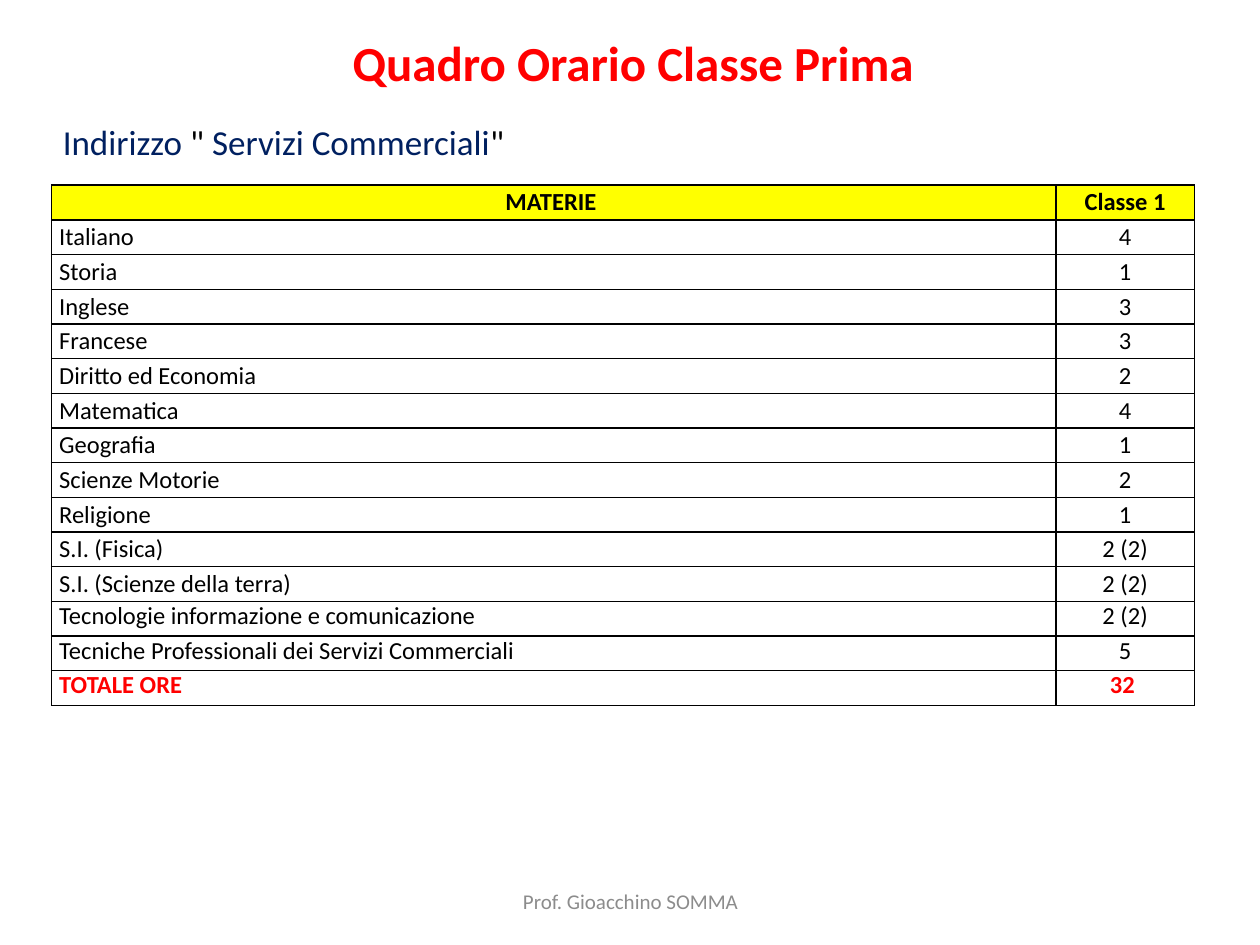
from dataclasses import dataclass

from lxml.etree import SubElement
from pptx import Presentation
from pptx.dml.color import RGBColor
from pptx.enum.text import MSO_ANCHOR, MSO_AUTO_SIZE, PP_ALIGN
from pptx.oxml.ns import qn
from pptx.util import Inches, Pt


@dataclass(frozen=True)
class Theme:
    """Colours, font and type sizes of the slide."""
    font: str = "Calibri"
    red: str = "FF0000"
    navy: str = "002060"
    black: str = "000000"
    grey: str = "8C8C8C"
    yellow: str = "FFFF00"
    title: int = 28
    subtitle: int = 20
    body: int = 14
    footer: int = 12
    border: int = 1


T = Theme()
WIDTH, HEIGHT = Inches(10), Inches(7.5)
HEADER = ("MATERIE ", "Classe 1")
SUBJECTS = [
    ("Italiano", "4"),
    ("Storia", "1"),
    ("Inglese", "3"),
    ("Francese", "3"),
    ("Diritto ed Economia", "2"),
    ("Matematica", "4"),
    ("Geografia", "1"),
    ("Scienze Motorie", "2"),
    ("Religione", "1"),
    ("S.I. (Fisica)", "2 (2)"),
    ("S.I. (Scienze della terra)", "2 (2)"),
    ("Tecnologie informazione e comunicazione", "2 (2)"),
    ("Tecniche Professionali dei Servizi Commerciali", "5"),
]
TOTAL = ("TOTALE ORE", "32 ")
TOP_ANCHORED = 3


def share(x, y, w, h):
    """Turn percentages of the slide into a box of lengths."""
    return tuple(int(v * side / 100) for v, side in
                 ((x, WIDTH), (y, HEIGHT), (w, WIDTH), (h, HEIGHT)))


def add_run(p, text, size, color, bold=False):
    """Append one formatted run to a paragraph."""
    r = p.add_run()
    r.text = text
    r.font.name = T.font
    r.font.size = Pt(size)
    r.font.bold = bold
    r.font.color.rgb = RGBColor.from_string(color)


def add_line(s, box, runs, size, align=PP_ALIGN.LEFT, bold=False,
             anchor=MSO_ANCHOR.TOP, fit=MSO_AUTO_SIZE.SHAPE_TO_FIT_TEXT):
    """Place a one-paragraph text box made of (text, colour) runs."""
    tf = s.shapes.add_textbox(*box).text_frame
    tf.word_wrap = True
    tf.auto_size = fit
    tf.vertical_anchor = anchor
    p = tf.paragraphs[0]
    p.alignment = align
    for text, color in runs:
        add_run(p, text, size, color, bold)


def add_title(s, box):
    """Place the slide title."""
    add_line(s, box, [("Quadro Orario Classe Prima", T.red)], T.title,
             PP_ALIGN.CENTER, bold=True)


def add_subtitle(s, box):
    """Place the name of the course of study."""
    add_line(s, box, [("Indirizzo ", T.navy), ('" ', T.black),
                      ("Servizi Commerciali", T.navy), ('"', T.black)],
             T.subtitle)


def add_footer(s, box):
    """Place the author line."""
    add_line(s, box, [("Prof. Gioacchino SOMMA", T.grey)], T.footer,
             PP_ALIGN.CENTER, anchor=MSO_ANCHOR.MIDDLE,
             fit=MSO_AUTO_SIZE.NONE)


def set_borders(cell):
    """Draw a solid line on all four sides of a cell."""
    tc_pr = cell._tc.get_or_add_tcPr()
    for side in ("a:lnL", "a:lnR", "a:lnT", "a:lnB"):
        ln = SubElement(tc_pr, qn(side), w=str(Pt(T.border)))
        fill = SubElement(ln, qn("a:solidFill"))
        SubElement(fill, qn("a:srgbClr"), val=T.black)


def fill_cell(cell, text, align, anchor, color, bold, fill):
    """Write and format one table cell."""
    set_borders(cell)
    if fill:
        cell.fill.solid()
        cell.fill.fore_color.rgb = RGBColor.from_string(fill)
    else:
        cell.fill.background()
    cell.margin_left = cell.margin_right = Inches(0.06)
    cell.margin_top = cell.margin_bottom = 0
    cell.vertical_anchor = anchor
    p = cell.text_frame.paragraphs[0]
    p.alignment = align
    add_run(p, text, T.body, color, bold)


def add_timetable(s, box):
    """Place the table of subjects and weekly hours."""
    rows = [HEADER, *SUBJECTS, TOTAL]
    last = len(rows) - 1
    table = s.shapes.add_table(len(rows), len(HEADER), *box).table
    table.first_row = table.horz_banding = False
    hours_width = Inches(1.1)
    table.columns[0].width = box[2] - hours_width
    table.columns[1].width = hours_width
    for i, row in enumerate(rows):
        table.rows[i].height = box[3] // len(rows)
        anchor = (MSO_ANCHOR.TOP if i > last - TOP_ANCHORED
                  else MSO_ANCHOR.MIDDLE)
        for j, text in enumerate(row):
            centred = i == 0 or j == 1
            fill_cell(table.cell(i, j), text,
                      PP_ALIGN.CENTER if centred else PP_ALIGN.LEFT,
                      anchor, T.red if i == last else T.black,
                      i in (0, last), T.yellow if i == 0 else None)


def main():
    """Build the slide and save it."""
    prs = Presentation()
    prs.slide_width, prs.slide_height = WIDTH, HEIGHT
    s = prs.slides.add_slide(prs.slide_layouts[6])
    add_footer(s, share(34.2, 92.67, 31.7, 5.33))
    add_title(s, share(8.4, 2.8, 83.7, 7.6))
    add_subtitle(s, share(4, 12.13, 94, 5.87))
    add_timetable(s, share(4.1, 19.6, 90.7, 55.07))
    prs.save("out.pptx")


if __name__ == "__main__":
    main()
